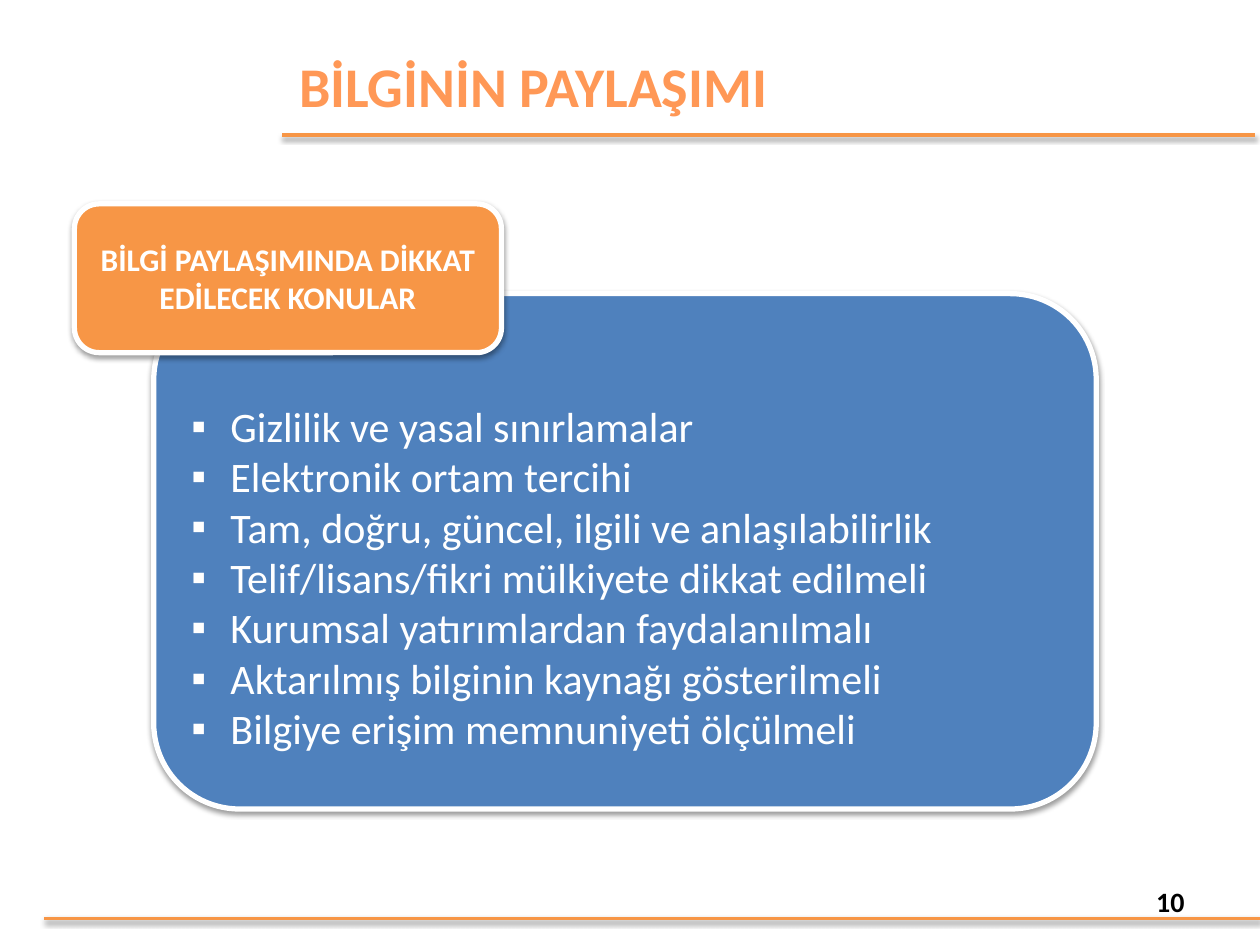
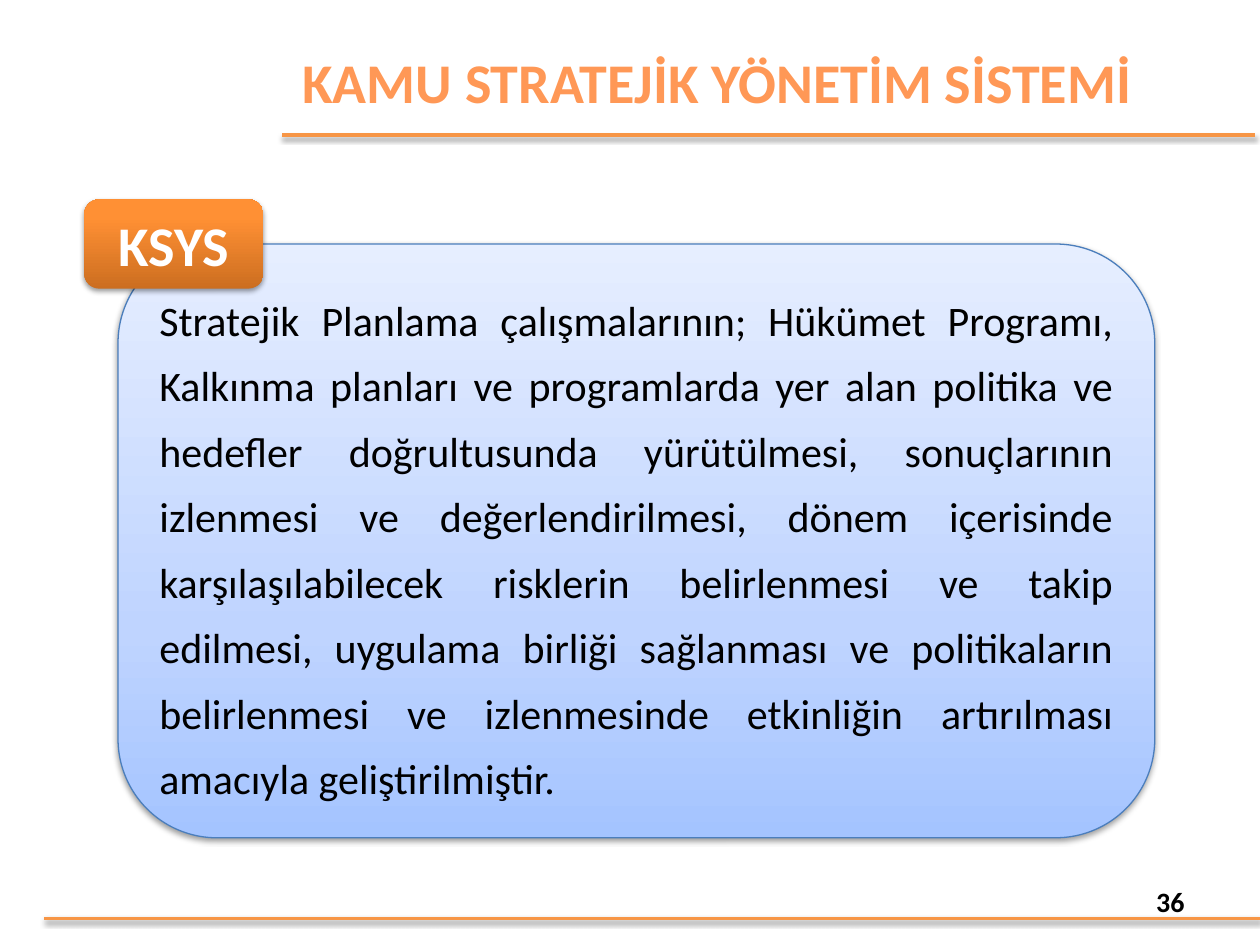
from lxml.etree import SubElement
from pptx import Presentation
from pptx.dml.color import RGBColor
from pptx.enum.shapes import MSO_CONNECTOR, MSO_SHAPE
from pptx.enum.text import MSO_ANCHOR as Anchor, MSO_AUTO_SIZE, PP_ALIGN as Align
from pptx.oxml import parse_xml
from pptx.oxml.ns import nsdecls, qn
from pptx.util import Cm, Pt

# Content
SHARING = {
    "title": "BİLGİNİN PAYLAŞIMI",
    "title_box": (5.56, 0.91, 10.39, 1.63),
    "number": "10",
    "label": "BİLGİ PAYLAŞIMINDA DİKKAT EDİLECEK KONULAR",
    "points": [
        "Gizlilik ve yasal sınırlamalar",
        "Elektronik ortam tercihi",
        "Tam, doğru, güncel, ilgili ve anlaşılabilirlik",
        "Telif/lisans/fikri mülkiyete dikkat edilmeli",
        "Kurumsal yatırımlardan faydalanılmalı",
        "Aktarılmış bilginin kaynağı gösterilmeli",
        "Bilgiye erişim memnuniyeti ölçülmeli",
    ],
}
SYSTEM = {
    "title": "KAMU STRATEJİK YÖNETİM SİSTEMİ",
    "title_box": (4.16, 0.13, 20.6, 3),
    "number": "36",
    "label": "KSYS",
    "text": (
        "Stratejik Planlama çalışmalarının; Hükümet Programı, Kalkınma planları ve "
        "programlarda yer alan politika ve hedefler doğrultusunda yürütülmesi, "
        "sonuçlarının izlenmesi ve değerlendirilmesi, dönem içerisinde "
        "karşılaşılabilecek risklerin belirlenmesi ve takip edilmesi, uygulama birliği "
        "sağlanması ve politikaların belirlenmesi ve izlenmesinde etkinliğin "
        "artırılması amacıyla geliştirilmiştir."
    ),
}

# Shared style
FONT = "Calibri"
ORANGE = RGBColor(0xF7, 0x96, 0x46)
TITLE_ORANGE = RGBColor(0xFF, 0x98, 0x56)
BLUE = RGBColor(0x4F, 0x81, 0xBD)
OUTLINE_BLUE = RGBColor(0x4B, 0x7E, 0xBC)
WHITE = RGBColor(0xFF, 0xFF, 0xFF)
BLACK = RGBColor(0x00, 0x00, 0x00)
# Gradient stops run from the bottom edge to the top edge
PALE_BLUE_STOPS = [
    (0, RGBColor(0xA4, 0xC4, 0xFF)),
    (35, RGBColor(0xBF, 0xD4, 0xFF)),
    (100, RGBColor(0xE6, 0xEE, 0xFF)),
]
ORANGE_STOPS = [
    (0, RGBColor(0xCC, 0x6E, 0x20)),
    (80, RGBColor(0xFF, 0x90, 0x34)),
    (100, RGBColor(0xFF, 0x91, 0x36)),
]
BANDS = [(0.89, 18.52, 25.4), (5.69, 2.72, 25.3)]  # left, height on slide, right
NUMBER_BOX = (18.21, 17.65, 5.92, 1.02)


def add_shadow(shape):
    effects = parse_xml(
        f'<a:effectLst {nsdecls("a")}>'
        '<a:outerShdw blurRad="39370" dist="20320" dir="5400000" rotWithShape="0">'
        '<a:srgbClr val="000000"><a:alpha val="38000"/></a:srgbClr>'
        "</a:outerShdw></a:effectLst>"
    )
    shape.element.find(qn("p:spPr")).append(effects)


def set_gradient(shape, stops):
    stop_xml = "".join(
        f'<a:gs pos="{position * 1000}"><a:srgbClr val="{color}"/></a:gs>'
        for position, color in stops
    )
    gradient = parse_xml(
        f'<a:gradFill {nsdecls("a")} rotWithShape="1"><a:gsLst>{stop_xml}</a:gsLst>'
        '<a:lin ang="16200000" scaled="0"/></a:gradFill>'
    )
    shape.fill.solid()
    properties = shape.element.find(qn("p:spPr"))
    properties.replace(properties.find(qn("a:solidFill")), gradient)


def set_bullet(paragraph):
    properties = paragraph._p.get_or_add_pPr()
    properties.set("marL", str(Cm(0.79)))
    properties.set("indent", str(-Cm(0.79)))
    SubElement(properties, qn("a:buFont")).set("typeface", "Arial")
    SubElement(properties, qn("a:buChar")).set("char", "▪")


def write(shape, lines, size, color, align, bold=False, anchor=Anchor.MIDDLE, bullets=False):
    frame = shape.text_frame
    frame.text = "\n".join(lines)
    frame.word_wrap = True
    frame.auto_size = MSO_AUTO_SIZE.NONE
    frame.vertical_anchor = anchor
    for paragraph in frame.paragraphs:
        paragraph.alignment = align
        if bullets:
            set_bullet(paragraph)
        for run in paragraph.runs:
            run.font.name = FONT
            run.font.size = Pt(size)
            run.font.bold = bold
            run.font.color.rgb = color
    return frame


def add_panel(slide, box, fill, line_color=None, line_width=0):
    """Rounded panel; fill is one colour or a list of gradient stops."""
    panel = slide.shapes.add_shape(MSO_SHAPE.ROUNDED_RECTANGLE, *map(Cm, box))
    if isinstance(fill, list):
        set_gradient(panel, fill)
    else:
        panel.fill.solid()
        panel.fill.fore_color.rgb = fill
    if line_color is None:
        panel.line.fill.background()
    else:
        panel.line.color.rgb = line_color
        panel.line.width = Pt(line_width)
    add_shadow(panel)
    return panel


def add_base_slide(presentation, content):
    slide = presentation.slides.add_slide(presentation.slide_layouts[5])
    # Bands
    for left, height, right in BANDS:
        band = slide.shapes.add_connector(
            MSO_CONNECTOR.STRAIGHT, Cm(left), Cm(height), Cm(right), Cm(height)
        )
        band.line.color.rgb = ORANGE
        band.line.width = Pt(2)
        add_shadow(band)
    # Title
    title = slide.shapes.title
    title.left, title.top, title.width, title.height = map(Cm, content["title_box"])
    write(title, [content["title"]], 32, TITLE_ORANGE, Align.CENTER, bold=True)
    # Page number
    number = slide.shapes.add_textbox(*map(Cm, NUMBER_BOX))
    write(number, [content["number"]], 16, BLACK, Align.RIGHT, bold=True)
    return slide


def build_sharing_slide(presentation):
    slide = add_base_slide(presentation, SHARING)
    points = add_panel(slide, (3.1, 5.92, 19, 10.39), BLUE, WHITE, 3)
    frame = write(points, SHARING["points"], 24, WHITE, Align.LEFT, bullets=True)
    frame.margin_top = Cm(1.15)  # keeps the list clear of the label
    label = add_panel(slide, (1.5, 4.11, 8.61, 3), ORANGE, WHITE, 3)
    write(label, [SHARING["label"]], 18, WHITE, Align.CENTER, bold=True)


def build_system_slide(presentation):
    slide = add_base_slide(presentation, SYSTEM)
    purpose = add_panel(slide, (2.38, 4.92, 20.9, 11.97), PALE_BLUE_STOPS, OUTLINE_BLUE, 0.75)
    frame = write(purpose, [SYSTEM["text"]], 24, BLACK, Align.JUSTIFY, anchor=Anchor.TOP)
    frame.paragraphs[0].line_spacing = 1.3
    label = add_panel(slide, (1.7, 4.02, 3.61, 1.8), ORANGE_STOPS)
    write(label, [SYSTEM["label"]], 32, WHITE, Align.CENTER, bold=True)


def main():
    presentation = Presentation()
    presentation.slide_width, presentation.slide_height = Cm(25.4), Cm(19.05)
    build_sharing_slide(presentation)
    build_system_slide(presentation)
    presentation.save("out.pptx")


if __name__ == "__main__":
    main()
